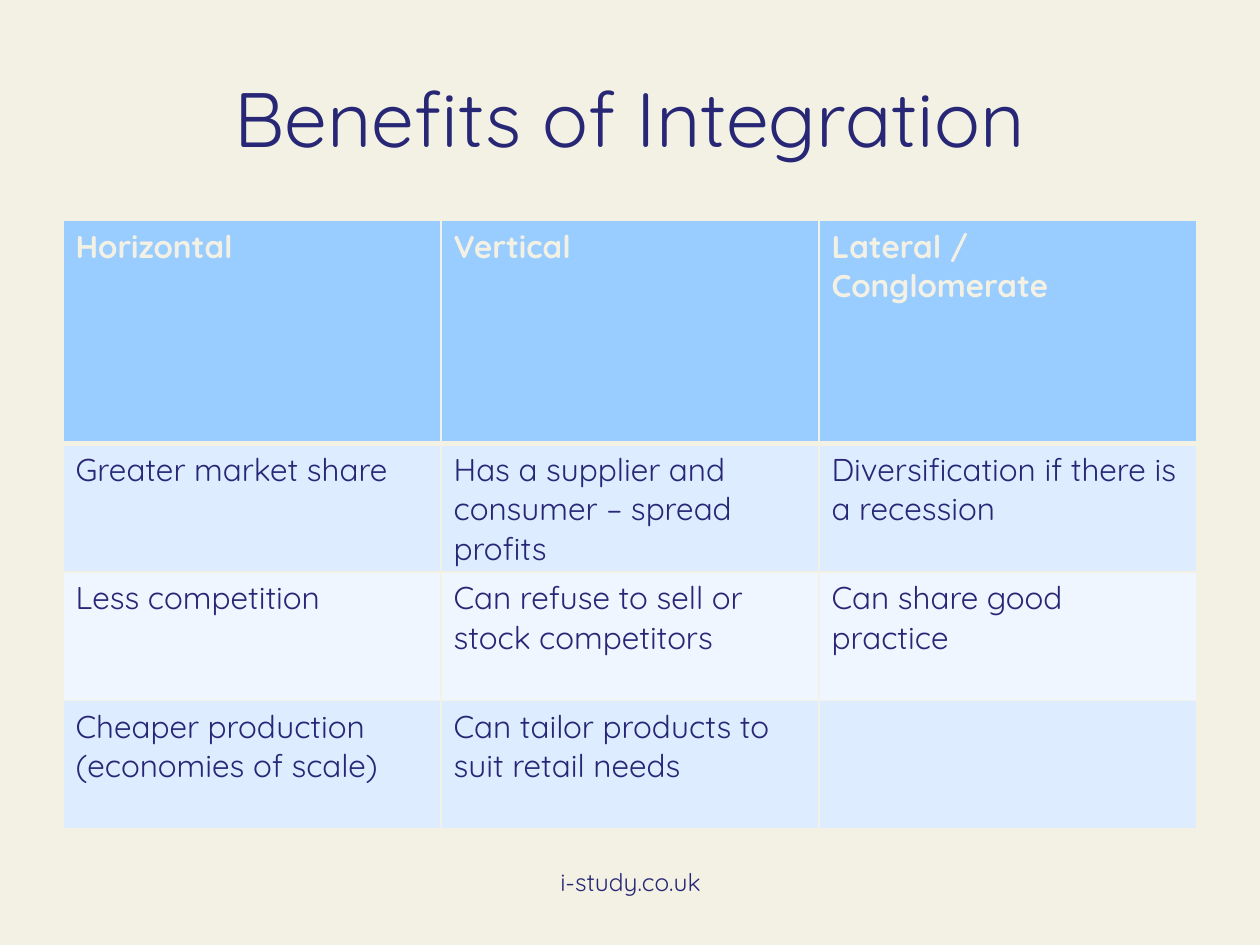
from lxml.etree import SubElement
from pptx import Presentation
from pptx.dml.color import RGBColor
from pptx.enum.text import MSO_ANCHOR, PP_ALIGN
from pptx.oxml.ns import qn
from pptx.util import Inches, Pt

COLORS = {
    "cream": "F3F1E4",
    "navy": "272776",
    "header": "99CCFF",
    "odd": "DEECFF",
    "even": "EFF6FF",
}
FONT = "Quicksand"
BENEFITS = [
    ["Horizontal", "Vertical", "Lateral / Conglomerate"],
    [
        "Greater market share",
        "Has a supplier and consumer – spread profits",
        "Diversification if there is a recession",
    ],
    [
        "Less competition",
        "Can refuse to sell or stock competitors",
        "Can share good practice",
    ],
    [
        "Cheaper production (economies of scale)",
        "Can tailor products to suit retail needs",
        "",
    ],
]
ROW_HEIGHTS = [1.77, 1.02, 1.02, 1.02]


def rgb(color):
    return RGBColor.from_string(COLORS[color])


def format_font(font, color, **values):
    for name, value in {"name": FONT, **values}.items():
        setattr(font, name, value)
    font.color.rgb = rgb(color)


def add_centred_text(slide, box, wording, size, anchor):
    frame = slide.shapes.add_textbox(*map(Inches, box)).text_frame
    for name, value in {"word_wrap": True, "vertical_anchor": anchor}.items():
        setattr(frame, name, value)
    line = frame.paragraphs[0]
    line.text = wording
    line.alignment = PP_ALIGN.CENTER
    format_font(line.runs[0].font, "navy", size=Pt(size))


def add_borders(cell, widths):
    properties = cell._tc.get_or_add_tcPr()
    for side, width in widths.items():
        border = SubElement(properties, qn(f"a:ln{side}"), w=str(Pt(width)))
        paint = SubElement(border, qn("a:solidFill"))
        SubElement(paint, qn("a:srgbClr"), val=COLORS["cream"])


def add_benefits(slide, box):
    rows, columns = len(BENEFITS), len(BENEFITS[0])
    table = slide.shapes.add_table(rows, columns, *map(Inches, box)).table
    for column in table.columns:
        column.width = Inches(box[2] / columns)
    for row, height in enumerate(ROW_HEIGHTS):
        table.rows[row].height = Inches(height)
        heading = row == 0
        fill = "header" if heading else "odd" if row % 2 else "even"
        widths = {"L": 1, "R": 1, "T": 3 if row == 1 else 1, "B": 3 if heading else 1}
        for column, wording in enumerate(BENEFITS[row]):
            cell = table.cell(row, column)
            add_borders(cell, widths)
            cell.fill.solid()
            cell.fill.fore_color.rgb = rgb(fill)
            cell.text = wording
            for run in cell.text_frame.paragraphs[0].runs:
                format_font(
                    run.font, "cream" if heading else "navy", size=Pt(18), bold=heading
                )


def main():
    deck = Presentation()
    deck.slide_width, deck.slide_height = Inches(10), Inches(7.5)
    slide = deck.slides.add_slide(deck.slide_layouts[6])
    slide.background.fill.solid()
    slide.background.fill.fore_color.rgb = rgb("cream")
    add_centred_text(
        slide, (0.5, 0.3, 9, 1.25), "Benefits of Integration", 44, MSO_ANCHOR.MIDDLE
    )
    add_benefits(slide, (0.5, 1.75, 9, sum(ROW_HEIGHTS)))
    add_centred_text(slide, (3.42, 6.83, 3.17, 0.52), "i-study.co.uk", 14, MSO_ANCHOR.TOP)
    deck.save("out.pptx")


if __name__ == "__main__":
    main()
